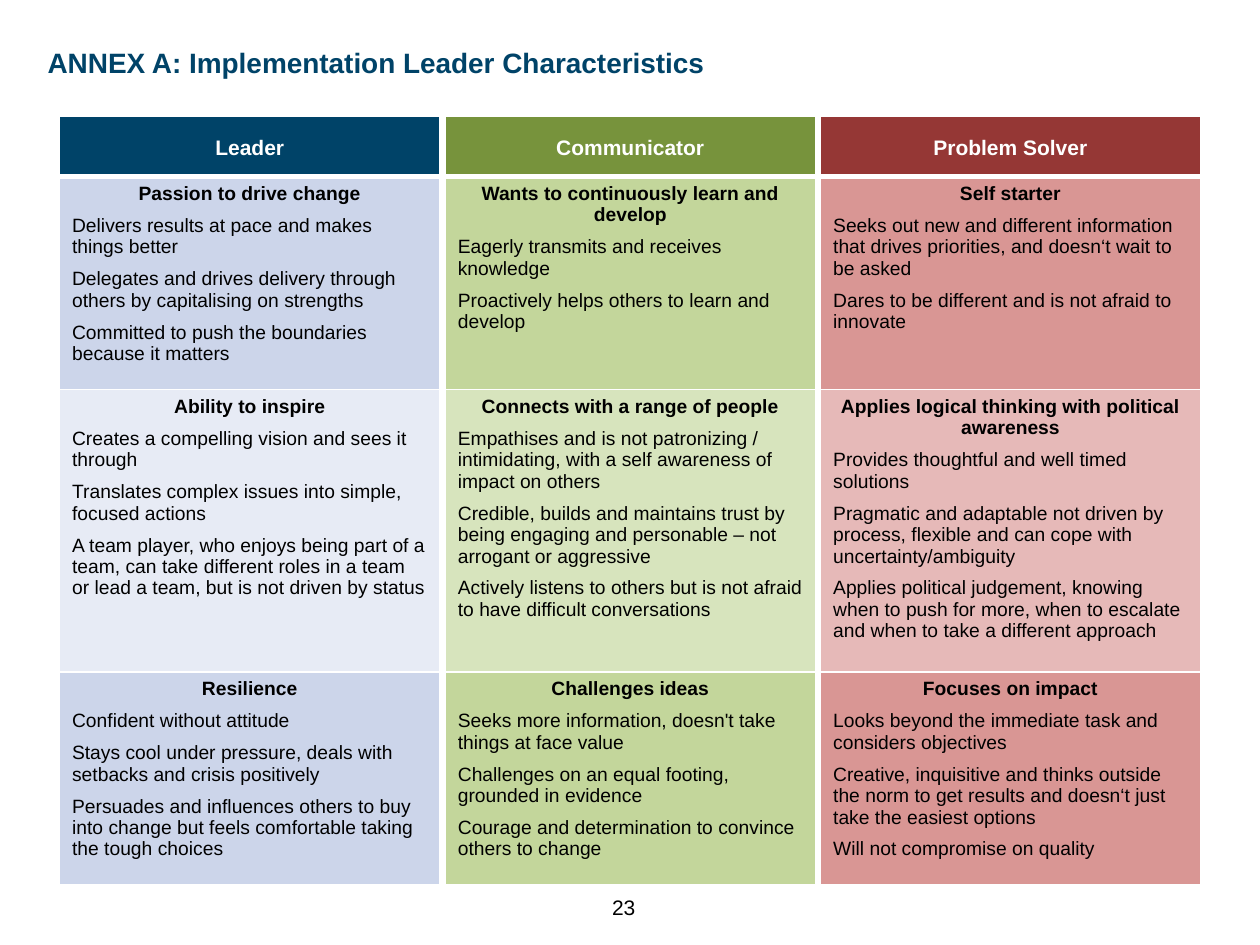
"""Builds the annex slide on implementation leader characteristics."""
from dataclasses import dataclass

from pptx import Presentation
from pptx.dml.color import RGBColor
from pptx.enum import text
from pptx.oxml import parse_xml
from pptx.oxml.ns import nsdecls
from pptx.util import Pt


@dataclass(frozen=True)
class Theme:
    font: str = "Arial"
    navy: str = "004368"
    black: str = "000000"
    white: str = "FFFFFF"
    title_size: float = 16
    header_size: float = 12
    body_size: float = 11
    thin: float = 1
    thick: float = 3


THEME = Theme()
LEFT, CENTER = text.PP_ALIGN.LEFT, text.PP_ALIGN.CENTER
TOP, MIDDLE = text.MSO_ANCHOR.TOP, text.MSO_ANCHOR.MIDDLE
COLUMN_WIDTHS = [217.5, 3, 211.5, 3, 217]
ROW_HEIGHTS = [34.5, 121.7, 161.4, 121.7]

ROLES = [
    ("Leader", "004368", "CCD5EA", "E7EBF5", [
        ["Passion to drive change",
         "Delivers results at pace and makes things better",
         "Delegates and drives delivery through others by capitalising on strengths",
         "Committed to push the boundaries because it matters"],
        ["Ability to inspire",
         "Creates a compelling vision and sees it through",
         "Translates complex issues into simple, focused actions",
         "A team player, who enjoys being part of a team, can take different roles "
         "in a team or lead a team, but is not driven by status"],
        ["Resilience",
         "Confident without attitude",
         "Stays cool under pressure, deals with setbacks and crisis positively",
         "Persuades and influences others to buy into change but feels comfortable "
         "taking the tough choices"],
    ]),
    ("Communicator", "77933C", "C3D69B", "D7E4BD", [
        ["Wants to continuously learn and develop",
         "Eagerly transmits and receives knowledge",
         "Proactively helps others to learn and develop"],
        ["Connects with a range of people",
         "Empathises and is not patronizing / intimidating, with a self awareness "
         "of impact on others",
         "Credible, builds and maintains trust by being engaging and personable – "
         "not arrogant or aggressive",
         "Actively listens to others but is not afraid to have difficult conversations"],
        ["Challenges ideas",
         "Seeks more information, doesn't take things at face value",
         "Challenges on an equal footing, grounded in evidence",
         "Courage and determination to convince others to change"],
    ]),
    ("Problem Solver", "953735", "D99694", "E6B9B8", [
        ["Self starter",
         "Seeks out new and different information that drives priorities, and "
         "doesn‘t wait to be asked",
         "Dares to be different and is not afraid to innovate"],
        ["Applies logical thinking with political awareness",
         "Provides thoughtful and well timed solutions",
         "Pragmatic and adaptable not driven by process, flexible and can cope "
         "with uncertainty/ambiguity",
         "Applies political judgement, knowing when to push for more, when to "
         "escalate and when to take a different approach"],
        ["Focuses on impact",
         "Looks beyond the immediate task and considers objectives",
         "Creative, inquisitive and thinks outside the norm to get results and "
         "doesn‘t just take the easiest options",
         "Will not compromise on quality"],
    ]),
]


def write(para, words, size=THEME.body_size, color=THEME.black, bold=False,
          align=LEFT, after=0, spacing=1.0):
    span = para.add_run()
    span.text = words
    span.font.name, span.font.size, span.font.bold = THEME.font, Pt(size), bold
    span.font.color.rgb = RGBColor.from_string(color)
    para.alignment, para.line_spacing = align, spacing
    para.space_before, para.space_after = Pt(0), Pt(after)


def set_frame(frame, anchor, margins):
    frame.word_wrap, frame.auto_size = True, text.MSO_AUTO_SIZE.NONE
    frame.vertical_anchor = anchor
    (frame.margin_left, frame.margin_top,
     frame.margin_right, frame.margin_bottom) = map(Pt, margins)


def set_borders(cell, row):
    top = THEME.thick if row == 1 else THEME.thin
    bottom = THEME.thick if row == 0 else THEME.thin
    properties = cell._tc.get_or_add_tcPr()
    for side, width in zip("LRTB", (THEME.thin, THEME.thin, top, bottom)):
        properties.append(parse_xml(
            f'<a:ln{side} {nsdecls("a")} w="{Pt(width)}"><a:solidFill>'
            f'<a:srgbClr val="{THEME.white}"/></a:solidFill></a:ln{side}>'))


def fill_cell(cell, color):
    cell.fill.solid()
    cell.fill.fore_color.rgb = RGBColor.from_string(color)


def add_title(page, words):
    title = page.shapes.title
    title.left, title.top, title.width, title.height = map(Pt, (20, 22.5, 465, 26.5))
    set_frame(title.text_frame, TOP, (7.2, 3.6, 7.2, 3.6))
    write(title.text_frame.paragraphs[0], words, size=THEME.title_size,
          color=THEME.navy, bold=True)


def add_role_column(table, column, role):
    name, header_color, dark, light, traits = role
    header = table.cell(0, column)
    fill_cell(header, header_color)
    header.vertical_anchor = MIDDLE
    write(header.text_frame.paragraphs[0], name, size=THEME.header_size,
          color=THEME.white, bold=True, align=CENTER, spacing=1.15)
    for row, (heading, *points) in enumerate(traits, 1):
        cell = table.cell(row, column)
        fill_cell(cell, dark if row % 2 else light)
        write(cell.text_frame.paragraphs[0], heading, bold=True, align=CENTER, after=6)
        for point in points:
            write(cell.text_frame.add_paragraph(), point, after=6)


def add_spacer_column(table, column):
    for row in range(len(ROW_HEIGHTS)):
        cell = table.cell(row, column)
        cell.margin_left = cell.margin_right = Pt(0)
        cell.fill.background()


def add_role_table(page):
    frame = page.shapes.add_table(
        len(ROW_HEIGHTS), len(COLUMN_WIDTHS), Pt(34), Pt(66.5),
        Pt(sum(COLUMN_WIDTHS)), Pt(sum(ROW_HEIGHTS)))
    table = frame.table
    table.first_row = table.horz_banding = False
    for column, width in zip(table.columns, COLUMN_WIDTHS):
        column.width = Pt(width)
    for row, (line, height) in enumerate(zip(table.rows, ROW_HEIGHTS)):
        line.height = Pt(height)
        for cell in line.cells:
            set_borders(cell, row)
    for index, role in enumerate(ROLES):
        add_role_column(table, 2 * index, role)
    for column in range(1, len(COLUMN_WIDTHS), 2):
        add_spacer_column(table, column)


def add_page_number(page, number):
    box = page.shapes.add_textbox(Pt(0), Pt(497), Pt(720), Pt(43))
    set_frame(box.text_frame, MIDDLE, (0, 0, 7.2, 0))
    write(box.text_frame.paragraphs[0], number, size=THEME.header_size, align=CENTER)


def main():
    deck = Presentation()
    deck.slide_width, deck.slide_height = Pt(720), Pt(540)
    page = deck.slides.add_slide(deck.slide_layouts.get_by_name("Title Only"))
    add_title(page, "ANNEX A: Implementation Leader Characteristics")
    add_role_table(page)
    add_page_number(page, "23")
    deck.save("out.pptx")


if __name__ == "__main__":
    main()
